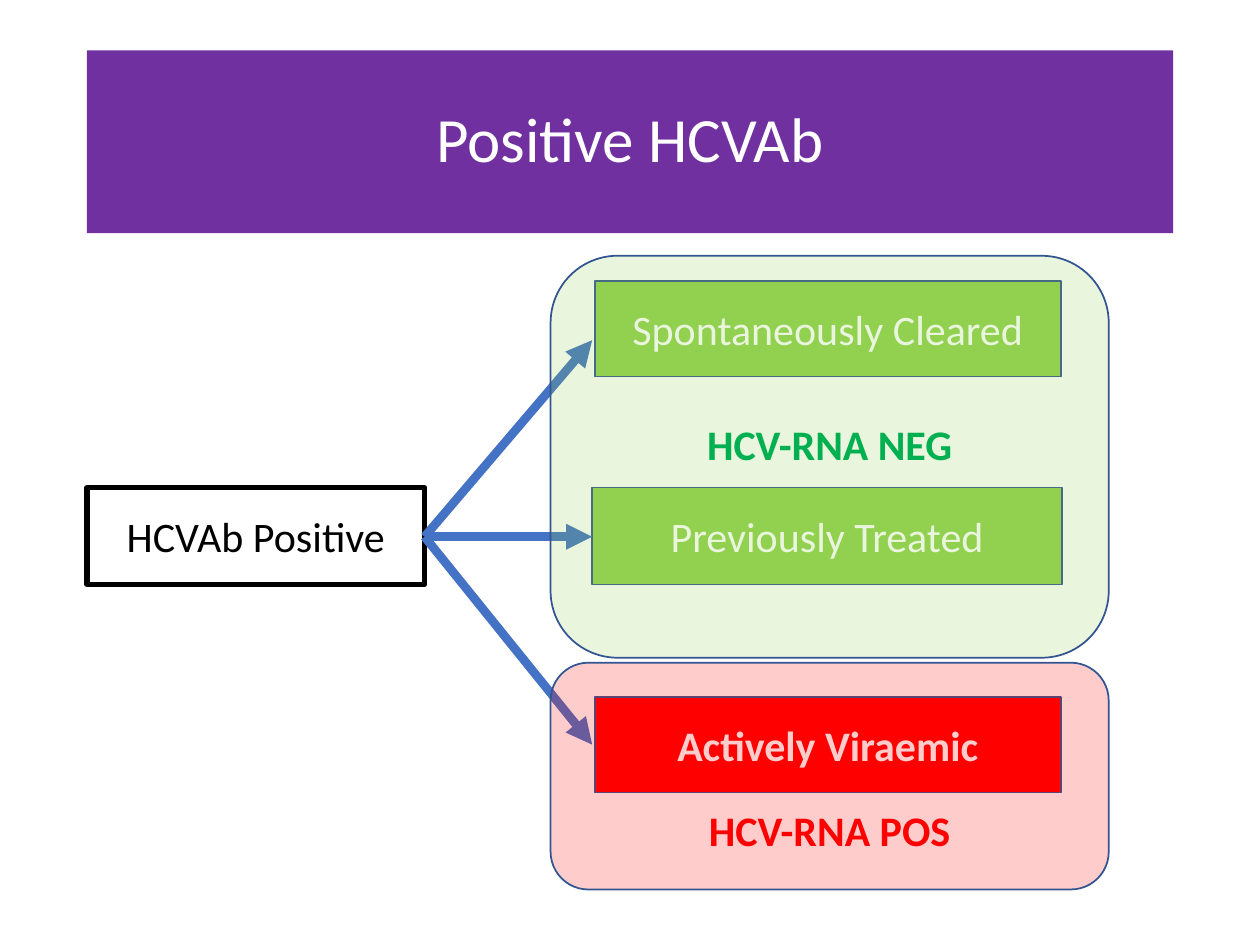
from pptx import Presentation
from pptx.dml.color import RGBColor
from pptx.enum.shapes import MSO_CONNECTOR, MSO_SHAPE
from pptx.enum.text import MSO_ANCHOR, PP_ALIGN
from pptx.oxml.ns import qn
from pptx.util import Inches, Pt
from lxml import etree

RECT = MSO_SHAPE.RECTANGLE
ROUND = MSO_SHAPE.ROUNDED_RECTANGLE
LINE = MSO_CONNECTOR.STRAIGHT
MIDDLE = MSO_ANCHOR.MIDDLE
CENTER = PP_ALIGN.CENTER

HUES = {
    "purple": "7030A0", "white": "FFFFFF", "black": "000000",
    "red": "FF0000", "lime": "92D050", "green": "00B050",
    "blue": "4472C4", "navy": "325491",
}


class Flow:
    """Style and current slide; lengths are columns and rows of a 100 x 75 grid."""

    font = "Calibri"
    size = 24

    def __init__(self, deck):
        self.slide = deck.slides.add_slide(deck.slide_layouts[6])
        self.col = deck.slide_width / 100
        self.row = deck.slide_height / 75

    def hue(self, name):
        return RGBColor.from_string(HUES[name])

    def spot(self, x, y):
        return round(x * self.col), round(y * self.row)

    def box(self, area, text, ink, fill=None, edge=None, width=1,
            bold=False, size=size, kind=RECT):
        x, y, w, h = area
        shape = self.slide.shapes.add_shape(kind, *self.spot(x, y), *self.spot(w, h))
        shape.shadow.inherit = False
        if fill:
            shape.fill.solid()
            shape.fill.fore_color.rgb = self.hue(fill)
        else:
            shape.fill.background()
        if edge:
            shape.line.color.rgb = self.hue(edge)
            shape.line.width = Pt(width)
        else:
            shape.line.fill.background()
        frame = shape.text_frame
        frame.word_wrap = True
        frame.vertical_anchor = MIDDLE
        para = frame.paragraphs[0]
        para.alignment = CENTER
        run = para.add_run()
        run.text = text
        run.font.name = self.font
        run.font.size = Pt(size)
        run.font.bold = bold
        run.font.color.rgb = self.hue(ink)
        return shape

    def zone(self, area, text, ink, fill, top=0.5, foot=0.5):
        """Translucent group panel; top and foot insets place its label."""
        shape = self.box(area, text, ink, fill, "navy", bold=True, kind=ROUND)
        tint = shape._element.spPr.find(qn("a:solidFill"))[0]
        etree.SubElement(tint, qn("a:alpha"), val="20000")
        shape.text_frame.margin_top = round(top * self.row)
        shape.text_frame.margin_bottom = round(foot * self.row)

    def arrow(self, start, end):
        line = self.slide.shapes.add_connector(LINE, *self.spot(*start), *self.spot(*end))
        line.line.color.rgb = self.hue("blue")
        line.line.width = Pt(5)
        etree.SubElement(line.line._get_or_add_ln(), qn("a:tailEnd"), type="triangle")
        etree.SubElement(line._element.spPr, qn("a:effectLst"))


def main():
    deck = Presentation()
    deck.slide_width, deck.slide_height = Inches(10), Inches(7.5)
    flow = Flow(deck)

    # Title band
    band = flow.box((6.9, 4, 86.2, 14.5), "Positive HCVAb", "white", "purple", size=36)
    band.text_frame.paragraphs[0].line_spacing = 0.9

    # Starting point
    flow.box((6.9, 38.7, 26.8, 7.7), "HCVAb Positive", "black", edge="black", width=3)

    # Outcomes
    for area, text, fill, bold in (
        ((47.2, 55.3, 37, 7.6), "Actively Viraemic", "red", True),
        ((47.2, 22.3, 37, 7.6), "Spontaneously Cleared", "lime", False),
        ((47, 38.7, 37.3, 7.7), "Previously Treated", "lime", False),
    ):
        flow.box(area, text, "white", fill, "navy", bold=bold)

    # Arrows fan out from the starting point
    for y in (27, 42.6, 59.1):
        flow.arrow((33.7, 42.6), (47, y))

    # Result groups laid over the outcomes
    flow.zone((43.7, 20.3, 44.3, 31.9), "HCV-RNA NEG", "green", "lime", foot=2.5)
    flow.zone((43.7, 52.6, 44.3, 18), "HCV-RNA POS", "red", "red", top=9)

    deck.save("out.pptx")


if __name__ == "__main__":
    main()
